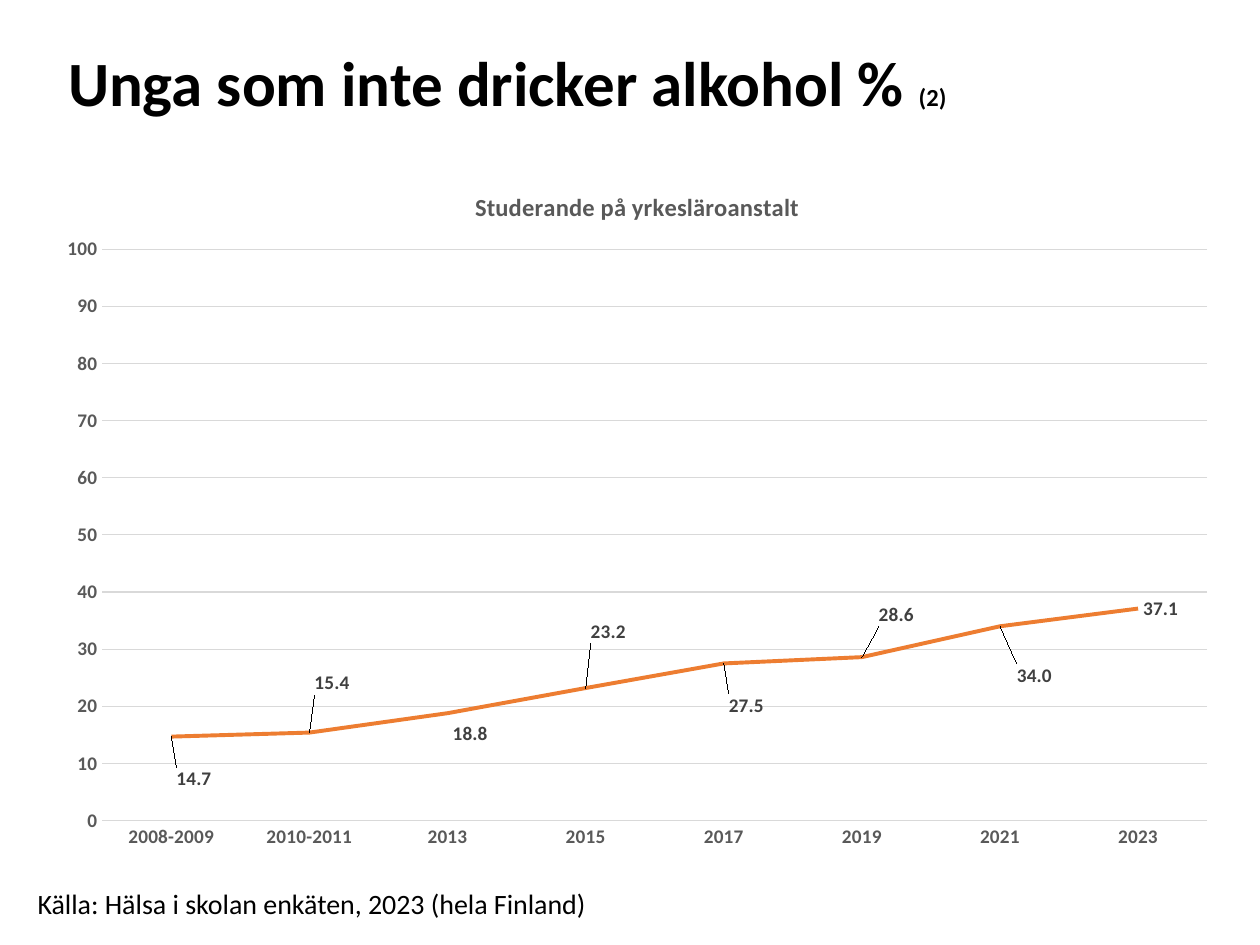
"""Build a slide with a line chart of young people who do not drink alcohol."""
from lxml.etree import fromstring
from pptx import Presentation
from pptx.chart.data import CategoryChartData as ChartData
from pptx.dml.color import RGBColor as Color
from pptx.enum.chart import XL_CHART_TYPE as ChartType
from pptx.enum.chart import XL_LABEL_POSITION as LabelPosition
from pptx.enum.chart import XL_TICK_MARK as TickMark
from pptx.enum.text import MSO_ANCHOR as Anchor
from pptx.enum.text import MSO_AUTO_SIZE as AutoSize
from pptx.enum.text import PP_ALIGN as Align
from pptx.oxml.ns import nsdecls
from pptx.util import Inches, Pt

COLORS = {"ink": "000000", "axis": "595959", "label": "404040",
          "grid": "D9D9D9", "line": "ED7D31"}
LABEL_FORMAT = "#,##0.0"


def set_font(font, size, color, bold=False):
    font.name, font.size, font.bold = "Calibri", Pt(size), bold
    font.color.rgb = Color.from_string(COLORS[color])


def make_layout(x, y, width=None, height=None):
    shares = {"x": x, "y": y, "w": width, "h": height}
    target = '<c:layoutTarget val="inner"/>' if width else ""
    modes = '<c:xMode val="edge"/><c:yMode val="edge"/>' if width or y == 0.04 else ""
    values = "".join(f'<c:{key} val="{share}"/>'
                     for key, share in shares.items() if share is not None)
    return fromstring(f'<c:layout {nsdecls("c")}><c:manualLayout>{target}{modes}'
                      f'{values}</c:manualLayout></c:layout>')


deck = Presentation()
deck.slide_width, deck.slide_height = Inches(10), Inches(7.5)
page = deck.slides.add_slide(deck.slide_layouts[5])

title = page.shapes.title
title.left, title.top = Inches(0.44), Inches(0.36)
title.width, title.height = Inches(9.13), Inches(1.01)
title.text_frame.vertical_anchor = Anchor.TOP
title.text_frame.auto_size = AutoSize.NONE
para = title.text_frame.paragraphs[0]
para.alignment, para.line_spacing = Align.LEFT, 0.9
for text, size in (("Unga som inte dricker alkohol % ", 36), ("(2)", 14)):
    span = para.add_run()
    span.text = text
    set_font(span.font, size, "ink", bold=True)

data = ChartData(number_format=LABEL_FORMAT)
data.categories = ["2008-2009", "2010-2011", "2013", "2015",
                   "2017", "2019", "2021", "2023"]
data.add_series("Series 1", (14.7, 15.4, 18.8, 23.2, 27.5, 28.6, 34, 37.1))
chart = page.shapes.add_chart(ChartType.LINE, Inches(0.34), Inches(1.25),
                              Inches(9.43), Inches(5.6), data).chart
set_font(chart.font, 10, "ink")
chart.has_legend = False
chart.has_title = True
heading = chart.chart_title
heading.include_in_layout = False
heading.text_frame.text = "Studerande på yrkesläroanstalt"
set_font(heading.text_frame.paragraphs[0].runs[0].font, 14, "axis", bold=True)
heading_xml = chart.element.chart.find("{*}title")
for old in heading_xml.findall("{*}layout"):
    heading_xml.remove(old)
heading_xml.find("{*}tx").addnext(make_layout(0.36, 0.04))

plot_xml = chart.element.chart.plotArea
for old in plot_xml.findall("{*}layout"):
    plot_xml.remove(old)
plot_xml.insert(0, make_layout(0.05, 0.13, 0.93, 0.81))

for axis in (chart.category_axis, chart.value_axis):
    axis.major_tick_mark = axis.minor_tick_mark = TickMark.NONE
    set_font(axis.tick_labels.font, 11, "axis", bold=True)
years, percent = chart.category_axis, chart.value_axis
percent.minimum_scale, percent.maximum_scale, percent.major_unit = 0, 100, 10
percent.tick_labels.number_format = "0"
percent.tick_labels.number_format_is_linked = False
percent.format.line.fill.background()
for line in (years.format.line, percent.major_gridlines.format.line):
    line.color.rgb = Color.from_string(COLORS["grid"])
    line.width = Pt(0.75)

plot = chart.plots[0]
plot.vary_by_categories = False
series = plot.series[0]
series.smooth = False
series.format.line.color.rgb = Color.from_string(COLORS["line"])
series.format.line.width = Pt(2.25)
labels = series.data_labels
labels.show_value = True
labels.number_format, labels.number_format_is_linked = LABEL_FORMAT, False
labels.position = LabelPosition.RIGHT
set_font(labels.font, 11, "label", bold=True)

label_shifts = [(0, 0.06), (0, -0.07), (0, 0.03), (0, -0.08),
                (0, 0.06), (0.01, -0.06), (0.01, 0.07)]
for index, shift in enumerate(label_shifts):
    label = series.points[index].data_label
    set_font(label.font, 11, "label", bold=True)
    label.position = LabelPosition.RIGHT
    label_xml = labels._element.findall("{*}dLbl")[index]
    label_xml.find("{*}idx").addnext(make_layout(*shift))

box = page.shapes.add_textbox(Inches(0.2), Inches(6.99), Inches(4.8), Inches(0.37))
box.text_frame.word_wrap = True
box.text_frame.auto_size = AutoSize.SHAPE_TO_FIT_TEXT
span = box.text_frame.paragraphs[0].add_run()
span.text = "Källa: Hälsa i skolan enkäten, 2023 (hela Finland)"
set_font(span.font, 16, "ink")

deck.save("out.pptx")
